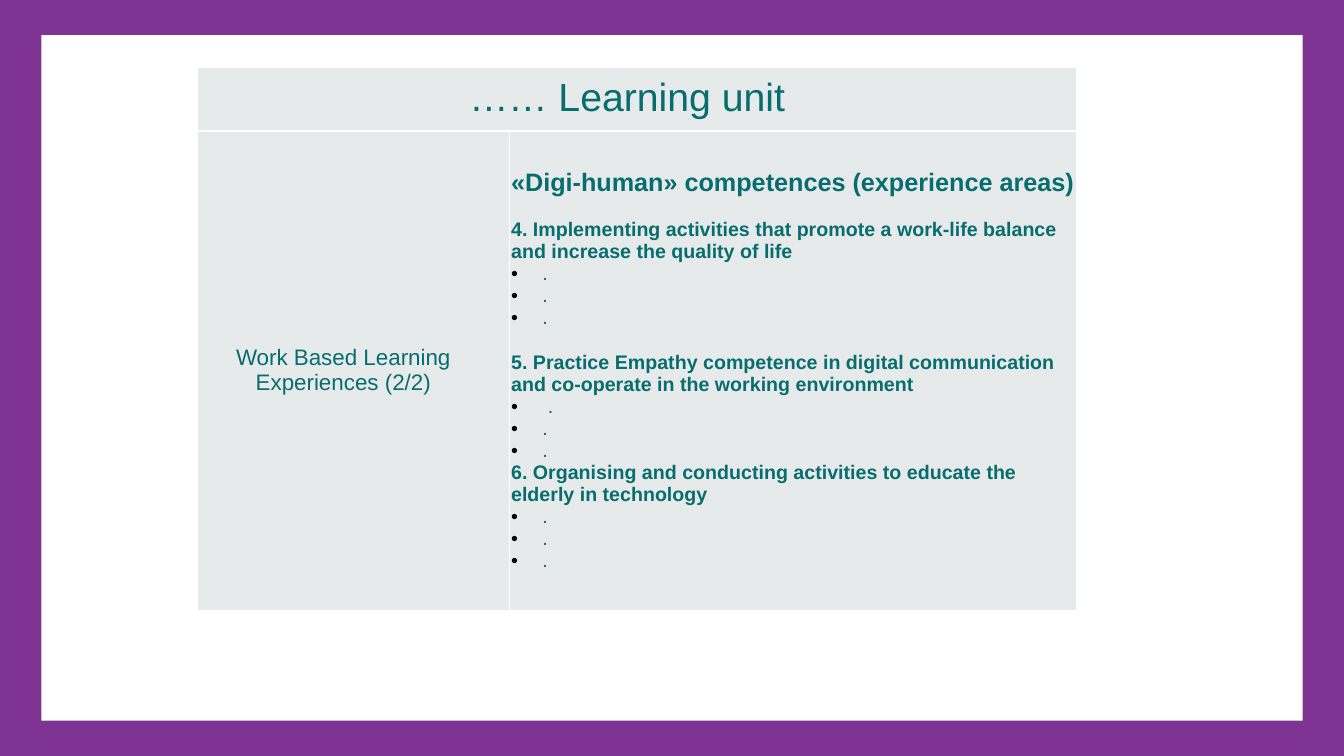
from lxml import etree
from pptx import Presentation
from pptx.dml.color import RGBColor
from pptx.enum.shapes import MSO_SHAPE
from pptx.enum.text import MSO_ANCHOR, PP_ALIGN
from pptx.oxml.ns import qn
from pptx.util import Inches, Pt

RECTANGLE = MSO_SHAPE.RECTANGLE
MIDDLE = MSO_ANCHOR.MIDDLE
CENTER, LEFT = PP_ALIGN.CENTER, PP_ALIGN.LEFT

COLORS = {"frame": "7F3494", "paper": "FFFFFF", "cell": "E6EAEA",
          "text": "086D6E", "bullet": "000000"}
FONT = "Arial"
BLANK_LAYOUT = 6
PAGE_WIDTH, PAGE_HEIGHT = 13.33, 7.5
COLUMNS, ROWS = (3.09, 5.63), (0.63, 4.76)
BULLET_INDENT = 0.31
LINE_GAP = 16

COMPETENCES = [
    ("4. Implementing activities that promote a work-life balance and increase the quality of life",
     [".", ".", "."], LINE_GAP),
    ("5. Practice Empathy competence in digital communication and co-operate in the working environment",
     [" .", ".", "."], LINE_GAP),
    ("6. Organising and conducting activities to educate the elderly in technology",
     [".", ".", "."], 0),
]


def color(name):
    return RGBColor.from_string(COLORS[name])


def add_panel(page, box, fill):
    panel = page.shapes.add_shape(RECTANGLE, *(Inches(length) for length in box))
    panel.shadow.inherit = False
    panel.fill.solid()
    panel.fill.fore_color.rgb = color(fill)
    panel.line.fill.background()


def add_frame(page, left, top):
    """Purple page edge around a white sheet."""
    add_panel(page, (0, 0, PAGE_WIDTH, PAGE_HEIGHT), "frame")
    add_panel(page, (left, top, PAGE_WIDTH - 2 * left, PAGE_HEIGHT - 2 * top), "paper")


def style_cell(cell, right_margin=0.02):
    cell.vertical_anchor = MIDDLE
    cell.margin_left = cell.margin_bottom = Inches(0.02)
    cell.margin_right = Inches(right_margin)
    cell.margin_top = 0
    properties = cell._tc.get_or_add_tcPr()
    for side in ("a:lnL", "a:lnR", "a:lnT", "a:lnB"):
        border = etree.SubElement(properties, qn(side), w=str(Pt(1)))
        fill = etree.SubElement(border, qn("a:solidFill"))
        etree.SubElement(fill, qn("a:srgbClr"), val=COLORS["paper"])
    cell.fill.solid()
    cell.fill.fore_color.rgb = color("cell")


def write(para, text, size, bold=False, align=LEFT, before=0):
    para.text = text
    para.alignment = align
    para.space_before = Pt(before)
    for span in para.runs:
        span.font.name = FONT
        span.font.size = Pt(size)
        span.font.bold = bold
        span.font.color.rgb = color("text")


def add_bullet(para):
    properties = para._p.get_or_add_pPr()
    properties.set("marL", str(Inches(BULLET_INDENT)))
    properties.set("indent", str(-Inches(BULLET_INDENT)))
    bullet_color = etree.SubElement(properties, qn("a:buClr"))
    etree.SubElement(bullet_color, qn("a:srgbClr"), val=COLORS["bullet"])
    etree.SubElement(properties, qn("a:buFont"), typeface=FONT)
    etree.SubElement(properties, qn("a:buChar"), char="•")


def fill_competences(cell):
    frame = cell.text_frame
    write(frame.paragraphs[0], "«Digi-human» competences (experience areas)", 18, bold=True)
    for heading, items, gap in COMPETENCES:
        write(frame.add_paragraph(), heading, 14, bold=True, before=gap)
        for item in items:
            para = frame.add_paragraph()
            write(para, item, 14)
            add_bullet(para)


def add_unit_table(page, left, top):
    table = page.shapes.add_table(
        len(ROWS), len(COLUMNS), Inches(left), Inches(top),
        Inches(sum(COLUMNS)), Inches(sum(ROWS))).table
    table.first_row = table.horz_banding = False
    for column, width in zip(table.columns, COLUMNS):
        column.width = Inches(width)
    for row, height in zip(table.rows, ROWS):
        row.height = Inches(height)

    title, label, competences = table.cell(0, 0), table.cell(1, 0), table.cell(1, 1)
    title.merge(table.cell(0, 1))
    for cell in (title, label):
        style_cell(cell, right_margin=0.22)
    style_cell(competences)
    write(title.text_frame.paragraphs[0], "…… Learning unit", 28, align=CENTER)
    write(label.text_frame.paragraphs[0], "Work Based Learning Experiences (2/2)", 16, align=CENTER)
    fill_competences(competences)


def main():
    deck = Presentation()
    deck.slide_width, deck.slide_height = Inches(PAGE_WIDTH), Inches(PAGE_HEIGHT)
    page = deck.slides.add_slide(deck.slide_layouts[BLANK_LAYOUT])
    add_frame(page, 0.41, 0.35)
    add_unit_table(page, 1.96, 0.67)
    deck.save("out.pptx")


if __name__ == "__main__":
    main()
